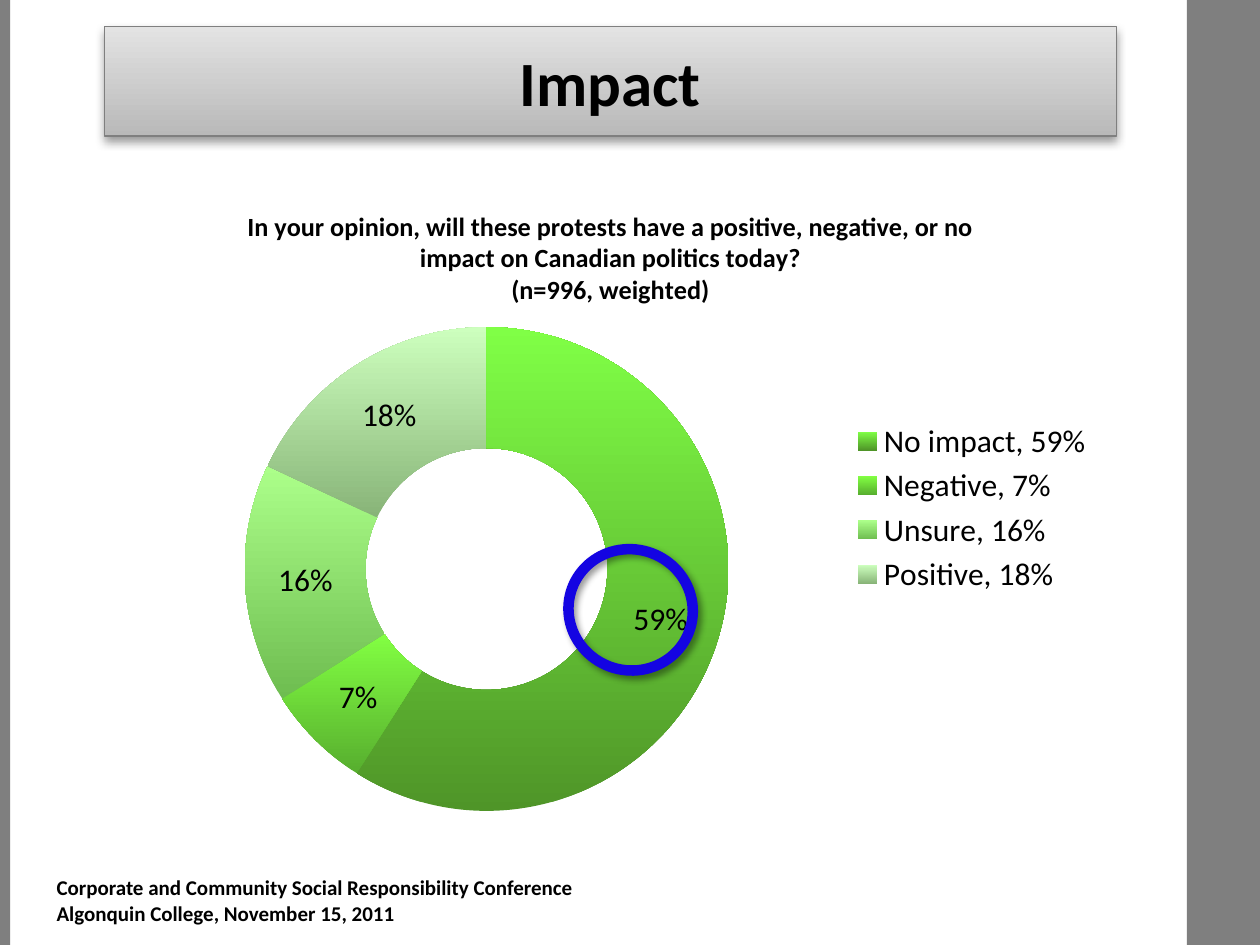
import pptx
import pptx.chart.data
import pptx.dml.color
import pptx.enum.chart
import pptx.enum.shapes
import pptx.enum.text
import pptx.oxml
import pptx.oxml.ns
import pptx.util
from dataclasses import dataclass

Pt = pptx.util.Pt
SHAPE = pptx.enum.shapes.MSO_SHAPE
ANCHOR = pptx.enum.text.MSO_ANCHOR
ALIGN = pptx.enum.text.PP_ALIGN


@dataclass(frozen=True)
class Theme:
    """Fonts, type sizes and colours of the slide."""
    font: str = "Calibri"
    heading: int = 36
    label: int = 18
    question: int = 15
    footer: int = 12
    text: str = "000000"
    grey: str = "7F7F7F"
    banner: tuple = ("B9B9B9", "E3E3E3")
    ring: str = "1404E2"


THEME = Theme()
WIDTH, HEIGHT = 720, 540
HEADING = "Impact"
QUESTION = (
    "In your opinion, will these protests have a positive, negative, or no "
    "impact on Canadian politics today?\n(n=996, weighted)"
)
FOOTER = ("Corporate and Community Social Responsibility Conference "
          "Algonquin College, November 15, 2011")
ANSWERS = [
    ("No impact", 59, ("4F9528", "80FF46")),
    ("Negative", 7, ("57AE2E", "82FF42")),
    ("Unsure", 16, ("6EBD50", "ACFF8A")),
    ("Positive", 18, ("88B478", "CDFFBE")),
]
SIDE_BARS = [(0, 5.76), (678.24, 41.76)]
BANNER_BOX = (59.76, 15.12, 578.16, 62.64)
CHART_BOX = (65.52, 105.84, 566.64, 368.64)
PLOT_BOX = {"x": 0.13, "y": 0.22, "w": 0.49, "h": 0.75}
RING_BOX = (324.72, 313.92, 71.28, 69.12)
FOOTER_BOX = (25.2, 502.56, 334.8, 23.76)


def rgb(value):
    """Return a colour object for a hex string."""
    return pptx.dml.color.RGBColor.from_string(value)


def place(box):
    """Return a box in points as lengths."""
    return [Pt(v) for v in box]


def style(font, size, bold=False):
    """Apply the theme font."""
    font.name, font.size, font.bold = THEME.font, Pt(size), bold
    font.color.rgb = rgb(THEME.text)


def shade(fill, colours):
    """Fill with a gradient that runs from bottom to top."""
    fill.gradient()
    fill.gradient_angle = 90
    for stop, colour in zip(fill.gradient_stops, colours):
        stop.color.rgb = rgb(colour)


def add_shape(s, kind, box, line=None, width=0):
    """Add an unshadowed shape with an optional outline."""
    sp = s.shapes.add_shape(kind, *place(box))
    sp.shadow.inherit = False
    if line:
        sp.line.color.rgb = rgb(line)
        sp.line.width = Pt(width)
    else:
        sp.line.fill.background()
    return sp


def cast_shadow(sp, blur, distance, angle):
    """Give a shape a soft black shadow."""
    effects = sp._element.spPr.find(pptx.oxml.ns.qn("a:effectLst"))
    effects.append(pptx.oxml.parse_xml(
        f'<a:outerShdw {pptx.oxml.ns.nsdecls("a")} blurRad="{Pt(blur)}" '
        f'dist="{Pt(distance)}" dir="{angle * 60000}" rotWithShape="0">'
        '<a:srgbClr val="000000"><a:alpha val="40000"/></a:srgbClr></a:outerShdw>'))


def write(sp, text, size, align):
    """Put bold text in the middle of a shape."""
    tf = sp.text_frame
    tf.word_wrap = True
    tf.vertical_anchor = ANCHOR.MIDDLE
    p = tf.paragraphs[0]
    p.text, p.alignment = text, align
    style(p.font, size, True)


def add_frame(s):
    """Draw the side bars and the heading banner."""
    for left, width in SIDE_BARS:
        sp = add_shape(s, SHAPE.RECTANGLE, (left, 0, width, HEIGHT))
        sp.fill.solid()
        sp.fill.fore_color.rgb = rgb(THEME.grey)
    banner = add_shape(s, SHAPE.RECTANGLE, BANNER_BOX, THEME.grey, 0.75)
    shade(banner.fill, THEME.banner)
    cast_shadow(banner, 5.2, 3, 90)
    write(banner, HEADING, THEME.heading, ALIGN.CENTER)


def add_doughnut(s):
    """Draw the doughnut of answers with its title and legend."""
    data = pptx.chart.data.CategoryChartData()
    data.categories = [f"{name}, {share}%" for name, share, _ in ANSWERS]
    data.add_series("Series 1", [share for _, share, _ in ANSWERS])
    chart = s.shapes.add_chart(
        pptx.enum.chart.XL_CHART_TYPE.DOUGHNUT, *place(CHART_BOX), data).chart
    style(chart.font, THEME.label)

    chart.has_title = True
    tf = chart.chart_title.text_frame
    tf.text = QUESTION
    for p in tf.paragraphs:
        style(p.font, THEME.question, True)
    chart.chart_title.include_in_layout = False

    chart.has_legend = True
    chart.legend.position = pptx.enum.chart.XL_LEGEND_POSITION.RIGHT
    chart.legend.include_in_layout = False

    plot = chart.plots[0]
    plot.vary_by_categories = True
    plot.has_data_labels = True
    labels = plot.data_labels
    labels.show_percentage, labels.show_value = True, False
    labels.number_format, labels.number_format_is_linked = "0%", False
    style(labels.font, THEME.label)
    for i, (_, _, colours) in enumerate(ANSWERS):
        form = plot.series[0].points[i].format
        shade(form.fill, colours)
        form.line.fill.background()

    area = chart._chartSpace.chart.plotArea
    for old in area.findall(pptx.oxml.ns.qn("c:layout")):
        area.remove(old)
    modes = "".join(f'<c:{k}Mode val="edge"/>' for k in "xy")
    sizes = "".join(f'<c:{k} val="{v}"/>' for k, v in PLOT_BOX.items())
    area.insert(0, pptx.oxml.parse_xml(
        f'<c:layout {pptx.oxml.ns.nsdecls("c")}><c:manualLayout>'
        f'<c:layoutTarget val="inner"/>{modes}{sizes}</c:manualLayout></c:layout>'))


def main():
    """Build the slide and save it."""
    prs = pptx.Presentation()
    prs.slide_width, prs.slide_height = Pt(WIDTH), Pt(HEIGHT)
    s = prs.slides.add_slide(prs.slide_layouts[6])
    add_frame(s)
    write(s.shapes.add_textbox(*place(FOOTER_BOX)), FOOTER, THEME.footer, ALIGN.LEFT)
    add_doughnut(s)
    ring = add_shape(s, SHAPE.OVAL, RING_BOX, THEME.ring, 6)
    ring.fill.background()
    ring.rotation = 20.4
    cast_shadow(ring, 4, 3, 45)
    prs.save("out.pptx")


if __name__ == "__main__":
    main()
